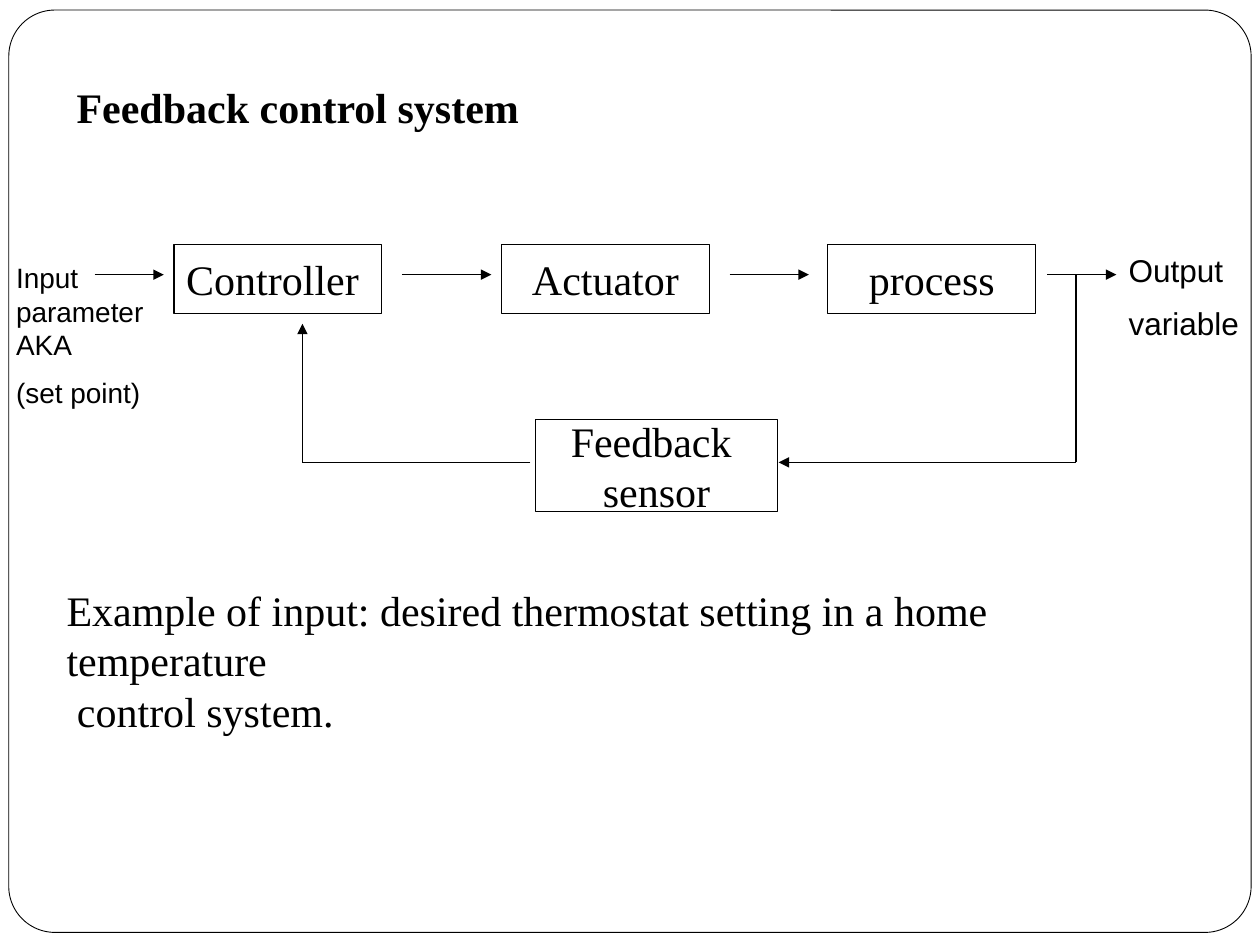
import pptx
import pptx.util
import pptx.dml.color
import pptx.enum.shapes
import pptx.enum.text
import pptx.oxml.ns
from lxml import etree

Inches, Pt = pptx.util.Inches, pptx.util.Pt
SHAPE = pptx.enum.shapes.MSO_SHAPE
ALIGN = pptx.enum.text.PP_ALIGN
ANCHOR = pptx.enum.text.MSO_ANCHOR
BLACK = pptx.dml.color.RGBColor(0, 0, 0)
WHITE = pptx.dml.color.RGBColor(255, 255, 255)
SERIF, SANS = "Times New Roman", "Arial"

prs = pptx.Presentation()
prs.slide_width, prs.slide_height = Inches(10), Inches(7.5)
s = prs.slides.add_slide(prs.slide_layouts[6])


def add_box(kind, left, top, width, height, weight):
    sp = s.shapes.add_shape(kind, Inches(left), Inches(top), Inches(width), Inches(height))
    sp.shadow.inherit = False
    sp.fill.solid()
    sp.fill.fore_color.rgb = WHITE
    sp.line.color.rgb = BLACK
    sp.line.width = Pt(weight)
    return sp


def write(sp, lines, size, font, bold=False, align=ALIGN.LEFT, before=0):
    tf = sp.text_frame
    for i, line in enumerate(lines):
        p = tf.paragraphs[0] if i == 0 else tf.add_paragraph()
        p.alignment = align
        p.space_before = Pt(before)
        r = p.add_run()
        r.text = line
        for name, value in {"size": Pt(size), "name": font, "bold": bold}.items():
            setattr(r.font, name, value)
        r.font.color.rgb = BLACK


# Rounded frame
frame = add_box(SHAPE.ROUNDED_RECTANGLE, 0.07, 0.08, 9.86, 7.32, 0.5)
frame.adjustments[0] = 0.05

# Blocks: forward path, then the sensor in the return path
blocks = [
    (["Controller "], 1.38, 1.94, 1.65, 0.55),
    (["Actuator"], 3.98, 1.94, 1.65, 0.55),
    (["process"], 6.57, 1.94, 1.65, 0.55),
    (["Feedback ", "sensor"], 4.25, 3.33, 1.92, 0.73),
]
for lines, *place in blocks:
    sp = add_box(SHAPE.RECTANGLE, *place, 0.75)
    sp.text_frame.word_wrap = False
    sp.text_frame.vertical_anchor = ANCHOR.MIDDLE
    write(sp, lines, 24, SERIF, align=ALIGN.CENTER)

# Signal lines: start, end, arrowhead
forward_y, return_y = 2.18, 3.67
pickoff_x, return_x = 8.54, 2.4
signals = [
    (0.75, forward_y, 1.3, forward_y, True),
    (3.19, forward_y, 3.9, forward_y, True),
    (5.79, forward_y, 6.42, forward_y, True),
    (8.31, forward_y, 8.86, forward_y, True),
    (pickoff_x, forward_y, pickoff_x, return_y, False),
    (pickoff_x, return_y, 6.18, return_y, True),
    (4.21, return_y, return_x, return_y, False),
    (return_x, return_y, return_x, 2.57, True),
]
for *ends, arrow in signals:
    line = s.shapes.add_connector(
        pptx.enum.shapes.MSO_CONNECTOR.STRAIGHT, *[Inches(v) for v in ends])
    line.line.color.rgb = BLACK
    line.line.width = Pt(0.75)
    if arrow:
        etree.SubElement(line.line._get_or_add_ln(),
                         pptx.oxml.ns.qn("a:tailEnd"), type="triangle")
    etree.SubElement(line._element.spPr, pptx.oxml.ns.qn("a:effectLst"))

# Signal labels, example and title
texts = [
    (["Input parameter AKA", "(set point)"], (0.03, 2.02, 1.3, 1.31),
     {"size": 16, "font": SANS, "before": 8}),
    (["Output", "variable"], (8.86, 1.94, 1.14, 0.85),
     {"size": 18, "font": SANS, "before": 9}),
    (["Example of input: desired thermostat setting in a home temperature",
      " control system."], (0.43, 4.59, 9.0, 1.3), {"size": 24, "font": SERIF}),
    (["Feedback control system"], (0.51, 0.6, 3.86, 0.5),
     {"size": 24, "font": SERIF, "bold": True}),
]
for lines, place, style in texts:
    sp = s.shapes.add_textbox(*[Inches(v) for v in place])
    sp.text_frame.word_wrap = True
    write(sp, lines, **style)

prs.save("out.pptx")
